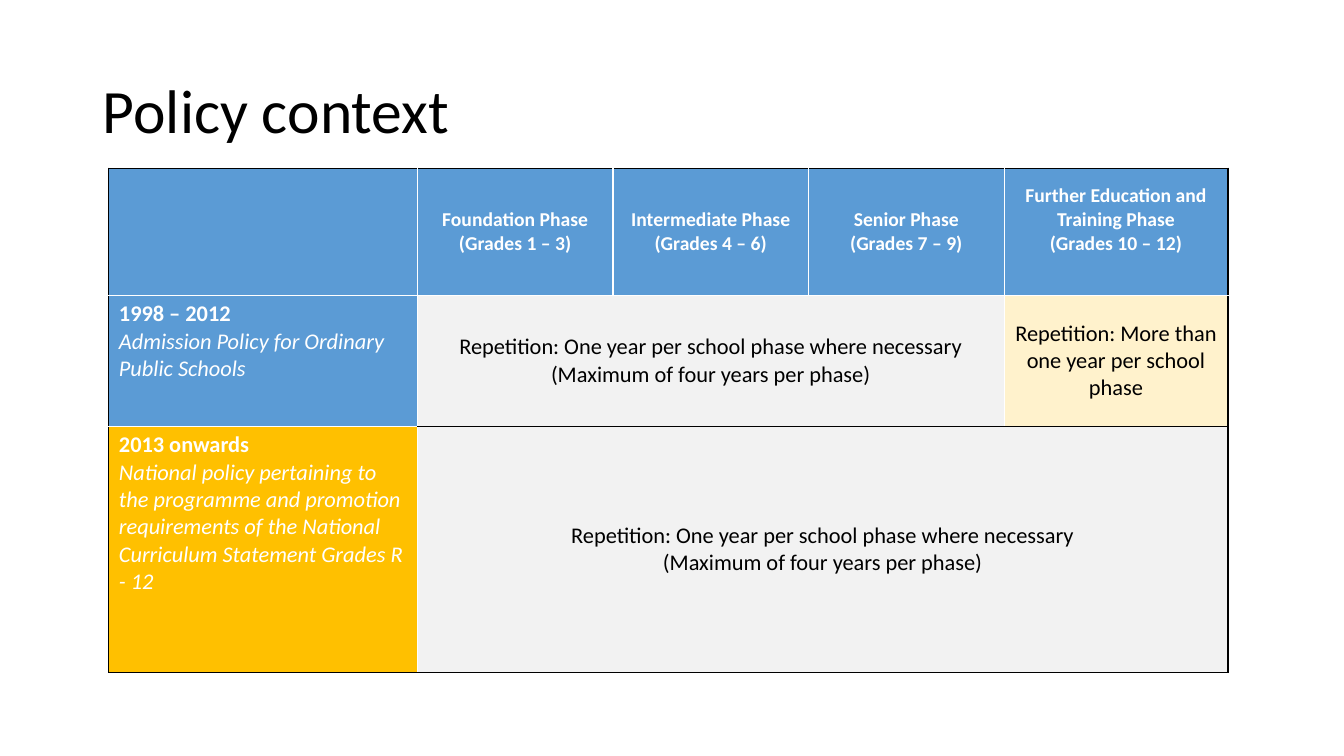
from lxml import etree
from pptx import Presentation
from pptx.dml.color import RGBColor
from pptx.enum.text import MSO_ANCHOR, MSO_AUTO_SIZE, PP_ALIGN
from pptx.oxml.ns import qn
from pptx.util import Pt

PX = 9144
LEFT, CENTER = PP_ALIGN.LEFT, PP_ALIGN.CENTER
TOP, MIDDLE = MSO_ANCHOR.TOP, MSO_ANCHOR.MIDDLE
NO_FIT = MSO_AUTO_SIZE.NONE

FONT = "Calibri"
BLACK, WHITE = "000000", "FFFFFF"
BLUE, GOLD, GREY, CREAM = "5B9BD5", "FFC000", "F2F2F2", "FFF2CC"
COL_WIDTHS = [306, 194, 194, 194, 222]
ROW_HEIGHTS = [126, 130, 244]
LAST_COL, LAST_ROW = len(COL_WIDTHS) - 1, len(ROW_HEIGHTS) - 1

PHASES = [
    ["Foundation Phase", "(Grades 1 – 3)"],
    ["Intermediate Phase", "(Grades 4 – 6)"],
    ["Senior Phase", "(Grades 7 – 9)"],
    ["Further Education and Training Phase", "(Grades 10 – 12)"],
]
POLICIES = [
    ("1998 – 2012", "Admission Policy for Ordinary Public Schools", BLUE),
    ("2013 onwards", "National policy pertaining to the programme and promotion "
     "requirements of the National Curriculum Statement Grades R - 12", GOLD),
]
ONE_YEAR = ["Repetition: One year per school phase where necessary",
            "(Maximum of four years per phase)"]
MORE_YEARS = ["Repetition: More than one year per school phase"]


def px(n):
    return int(n * PX)


def rgb(color):
    return RGBColor.from_string(color)


def add_text(p, text, size=16, color=BLACK, bold=False, italic=False, align=CENTER):
    p.alignment = align
    r = p.add_run()
    r.text = text
    f = r.font
    f.name, f.size, f.bold, f.italic = FONT, Pt(size), bold, italic
    f.color.rgb = rgb(color)


def add_title(slide, text):
    sp = slide.shapes.title
    sp.left, sp.top, sp.width, sp.height = px(92), px(40), px(1150), px(145)
    tf = sp.text_frame
    tf.auto_size, tf.vertical_anchor = NO_FIT, MIDDLE
    p = tf.paragraphs[0]
    p.line_spacing = 0.9
    add_text(p, text, size=44, align=LEFT)


def set_borders(cell, **sides):
    tc_pr = cell._tc.get_or_add_tcPr()
    for side, color in sides.items():
        ln = etree.SubElement(tc_pr, qn("a:ln" + side), w=str(Pt(1)))
        fill = etree.SubElement(ln, qn("a:solidFill"))
        etree.SubElement(fill, qn("a:srgbClr"), val=color)


def edge(is_black):
    return BLACK if is_black else WHITE


def fill_cell(table, row, col, fill, lines=(), span=1, anchor=MIDDLE):
    cell, end = table.cell(row, col), col + span - 1
    if span > 1:
        cell.merge(table.cell(row, end))
    left = edge(col == 0)
    right = edge(end == LAST_COL)
    top = edge(row == 0 or (row == LAST_ROW and col > 0))
    bottom = edge(row == LAST_ROW or (row > 0 and col > 0))
    set_borders(cell, L=left, R=right, T=top, B=bottom)
    for c in range(col + 1, end + 1):
        outer = {"R": right} if c == end else {}
        set_borders(table.cell(row, c), **outer, T=top, B=bottom)
    cell.fill.solid()
    cell.fill.fore_color.rgb = rgb(fill)
    cell.vertical_anchor = anchor
    tf = cell.text_frame
    for i, (text, style) in enumerate(lines):
        p = tf.add_paragraph() if i else tf.paragraphs[0]
        add_text(p, text, **style)


def styled(lines, **style):
    return [(text, style) for text in lines]


def add_policy_table(slide):
    gf = slide.shapes.add_table(len(ROW_HEIGHTS), len(COL_WIDTHS), px(108), px(167),
                                px(sum(COL_WIDTHS)), px(sum(ROW_HEIGHTS)))
    table = gf.table
    for column, width in zip(table.columns, COL_WIDTHS):
        column.width = px(width)
    for row, height in zip(table.rows, ROW_HEIGHTS):
        row.height = px(height)

    fill_cell(table, 0, 0, BLUE)
    for col, phase in enumerate(PHASES, 1):
        fill_cell(table, 0, col, BLUE, styled(phase, size=14, color=WHITE, bold=True))
    table.cell(0, LAST_COL).margin_bottom = px(29)

    for row, (years, policy, fill) in enumerate(POLICIES, 1):
        lines = (styled([years], color=WHITE, bold=True, align=LEFT)
                 + styled([policy], color=WHITE, italic=True, align=LEFT))
        fill_cell(table, row, 0, fill, lines, anchor=TOP)
    fill_cell(table, 1, 1, GREY, styled(ONE_YEAR), span=3)
    fill_cell(table, 1, LAST_COL, CREAM, styled(MORE_YEARS))
    fill_cell(table, 2, 1, GREY, styled(ONE_YEAR), span=4)


def main():
    prs = Presentation()
    prs.slide_width, prs.slide_height = px(1333), px(750)
    slide = prs.slides.add_slide(prs.slide_layouts[5])
    add_title(slide, "Policy context")
    add_policy_table(slide)
    prs.save("out.pptx")


if __name__ == "__main__":
    main()
